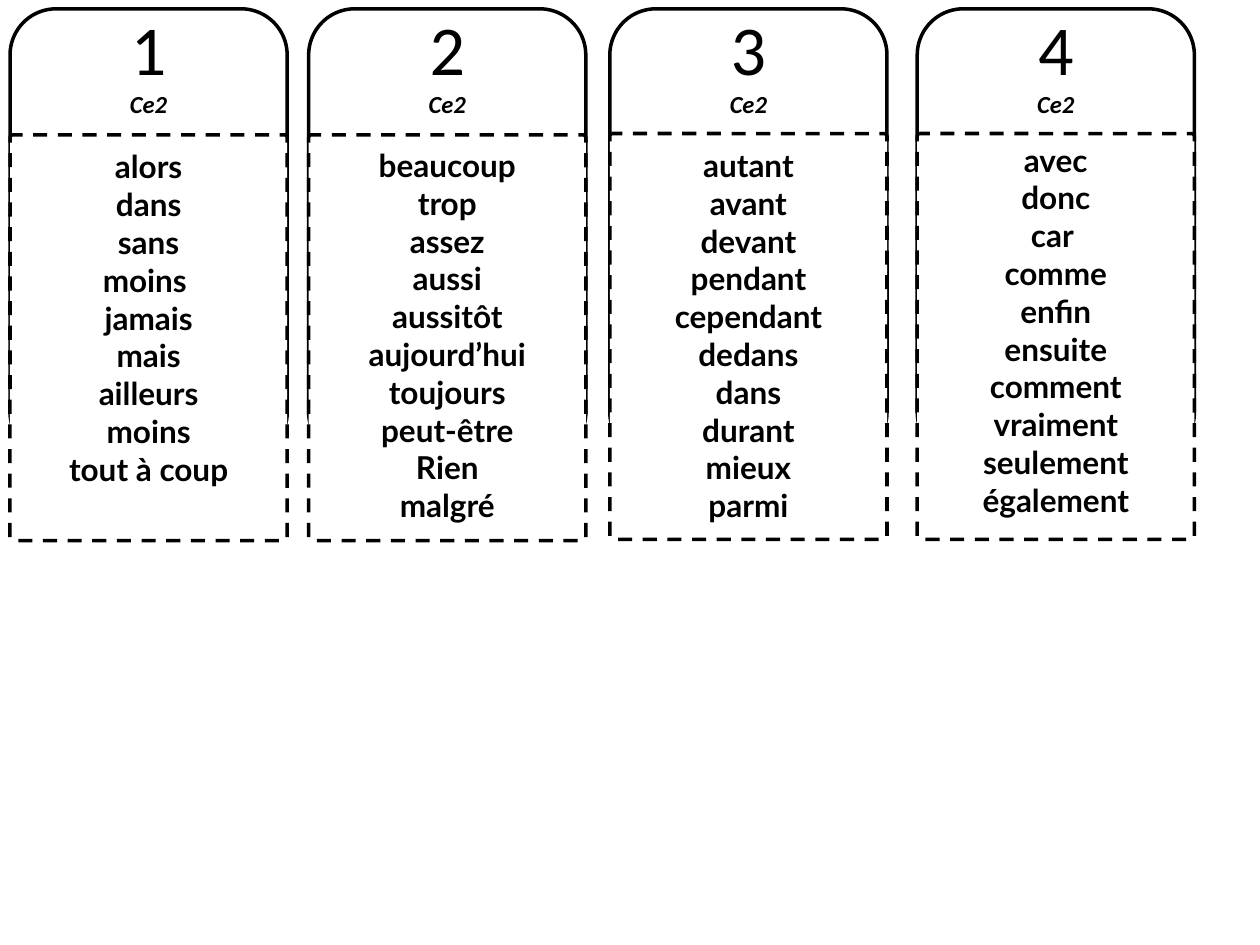
import pptx
import pptx.dml.color
import pptx.enum.dml
import pptx.enum.shapes
import pptx.enum.text
import pptx.util

COLORS = {"ink": "000000", "paper": "FFFFFF"}
COLUMNS, ROWS = 100, 75
CARD_WIDTH = 22
LIST_WIDTH = 17.1

CARDS = [
    (0.8, 10.7, 11.2, ["alors", "dans", "sans", "moins ", "jamais", "mais",
                       "ailleurs", "moins", "tout à coup"]),
    (24.5, 10.7, 11.1, ["beaucoup", "trop", "assez", "aussi", "aussitôt",
                        "aujourd’hui", "toujours", "peut-être", "Rien", "malgré"]),
    (48.4, 10.6, 11.1, ["autant", "avant", "devant", "pendant", "cependant dedans",
                        "dans", "durant", "mieux", "parmi"]),
    (72.8, 10.6, None, ["avec", "donc", "car ", "comme", "enfin", "ensuite",
                        "comment", "vraiment", "seulement", "également"]),
]


class CardSheet:
    def __init__(self, presentation):
        self.slide = presentation.slides.add_slide(presentation.slide_layouts[6])
        self.column = presentation.slide_width / COLUMNS
        self.row = presentation.slide_height / ROWS

    def place(self, left, top, width, height):
        return (int(left * self.column), int(top * self.row),
                int(width * self.column), int(height * self.row))

    def color(self, name):
        return pptx.dml.color.RGBColor.from_string(COLORS[name])

    def outline(self, left, top, height):
        shape = self.slide.shapes.add_shape(
            pptx.enum.shapes.MSO_SHAPE.ROUNDED_RECTANGLE,
            *self.place(left, top, CARD_WIDTH, height))
        shape.shadow.inherit = False
        shape.fill.background()
        shape.line.color.rgb = self.color("ink")
        shape.line.width = pptx.util.Pt(2)
        return shape

    def set_lines(self, text_frame, lines, font_name, size, bold=False):
        text_frame.word_wrap = True
        text_frame.text = "\n".join(lines)
        for paragraph in text_frame.paragraphs:
            paragraph.alignment = pptx.enum.text.PP_ALIGN.CENTER
            for run in paragraph.runs:
                run.font.name = font_name
                run.font.size = pptx.util.Pt(size)
                run.font.bold = bold
                run.font.color.rgb = self.color("ink")

    def header(self, left, number, level):
        text_frame = self.outline(left, 0.7, 35.7).text_frame
        text_frame.vertical_anchor = pptx.enum.text.MSO_ANCHOR.MIDDLE
        text_frame.margin_top = 0
        text_frame.margin_bottom = int(27.3 * self.row)
        self.set_lines(text_frame, [number, level], "Calibri", 40)
        font = text_frame.paragraphs[1].runs[0].font
        font.size = pptx.util.Pt(14)
        font.bold = font.italic = True

    def panel(self, left, top):
        shape = self.outline(left, top, 32.2)
        shape.adjustments[0] = 0.01
        shape.fill.solid()
        shape.fill.fore_color.rgb = self.color("paper")
        shape.line.dash_style = pptx.enum.dml.MSO_LINE.DASH
        shape.text_frame.vertical_anchor = pptx.enum.text.MSO_ANCHOR.TOP
        return shape

    def word_box(self, left, top, count):
        text_box = self.slide.shapes.add_textbox(
            *self.place(left + (CARD_WIDTH - LIST_WIDTH) / 2, top,
                        LIST_WIDTH, 1 + 3.03 * count))
        text_box.text_frame.auto_size = pptx.enum.text.MSO_AUTO_SIZE.SHAPE_TO_FIT_TEXT
        return text_box


def main():
    presentation = pptx.Presentation()
    presentation.slide_width = pptx.util.Inches(10)
    presentation.slide_height = pptx.util.Inches(7.5)
    sheet = CardSheet(presentation)
    for number, (left, panel_top, list_top, words) in enumerate(CARDS, start=1):
        sheet.header(left, str(number), "Ce2")
        holder = sheet.panel(left, panel_top)
        if list_top is not None:
            holder = sheet.word_box(left, list_top, len(words))
        sheet.set_lines(holder.text_frame, words, "Lato", 18, bold=True)
    presentation.save("out.pptx")


if __name__ == "__main__":
    main()
